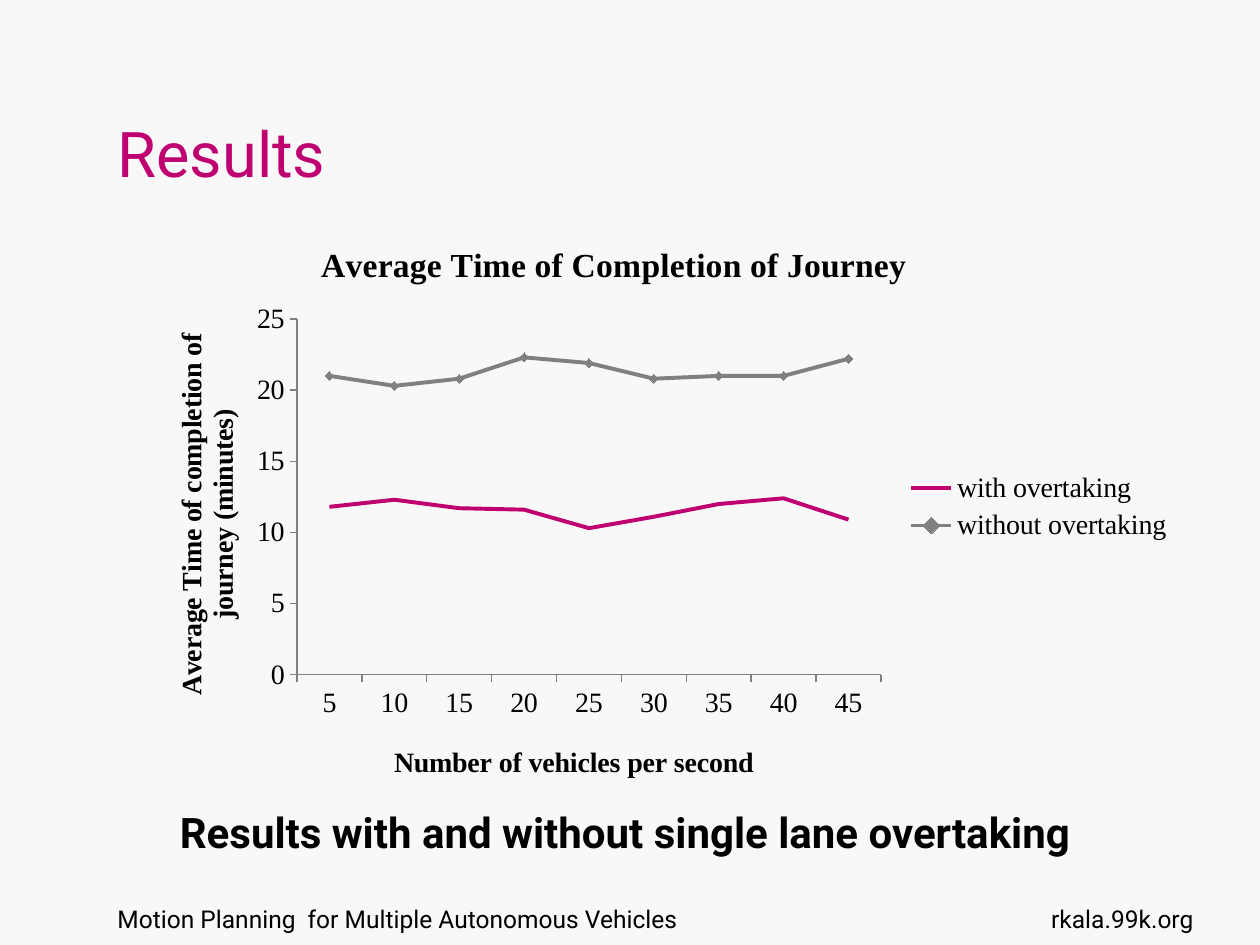
from lxml.etree import SubElement
from pptx import Presentation
from pptx.chart.data import CategoryChartData
from pptx.dml.color import RGBColor
from pptx.enum.chart import (XL_CHART_TYPE as CHART, XL_LEGEND_POSITION as LEGEND,
                             XL_MARKER_STYLE as MARKER, XL_TICK_MARK as TICK)
from pptx.enum.text import MSO_ANCHOR as ANCHOR, PP_ALIGN as ALIGN
from pptx.oxml.ns import qn
from pptx.util import Emu, Pt

PINK, GRAY, BLACK, BACKGROUND = "BF0071", "808080", "000000", "F8F8F8"
SANS, SERIF = "Roboto", "Times New Roman"

TITLE = ("Results", (105, 38, 853, 158))
# text, box, size, bold, alignment
TEXTS = [
    ("Motion Planning  for Multiple Autonomous Vehicles", (105, 898, 873, 66), 14, False, ALIGN.LEFT),
    ("rkala.99k.org", (1017, 898, 189, 66), 14, False, ALIGN.RIGHT),
    ("Results with and without single lane overtaking", (94, 800, 1062, 63), 24, True, ALIGN.CENTER),
]
CHART_BOX = (134, 214, 1052, 586)
PLOT_BOX = (297, 319, 584, 356)
CATEGORIES = ["5", "10", "15", "20", "25", "30", "35", "40", "45"]
# name, values, colour, marker
SERIES = [
    ("with overtaking", [11.8, 12.3, 11.7, 11.6, 10.3, 11.1, 12, 12.4, 10.9], PINK, MARKER.NONE),
    ("without overtaking", [21, 20.3, 20.8, 22.3, 21.9, 20.8, 21, 21, 22.2], GRAY, MARKER.DIAMOND),
]
# text, size, top left corner
CHART_TITLE = ("Average Time of Completion of Journey", 19.2, (315, 237))
CATEGORY_TITLE = ("Number of vehicles per second", 16, (389, 739))
VALUE_TITLE = ("Average Time of completion of journey (minutes)", 16, (168, 328))


def px(n):
    return Emu(round(n * 914400 / 126))


def rgb(color):
    return RGBColor.from_string(color)


def style(font, name, size, color=BLACK, bold=False):
    font.name, font.size, font.bold = name, Pt(size), bold
    font.color.rgb = rgb(color)


def set_layout(parent, index, box, inner=False):
    """Fix a chart part at a box (or corner) given in slide px."""
    for old in parent.findall(qn("c:layout")):
        parent.remove(old)
    layout = SubElement(parent, qn("c:layout"))
    parent.insert(index, layout)
    manual = SubElement(layout, qn("c:manualLayout"))
    left, top, width, height = CHART_BOX
    values = [("xMode", "edge"), ("yMode", "edge"),
              ("x", (box[0] - left) / width), ("y", (box[1] - top) / height)]
    if inner:
        values.insert(0, ("layoutTarget", "inner"))
        values += [("w", box[2] / width), ("h", box[3] / height)]
    for tag, value in values:
        SubElement(manual, qn(f"c:{tag}")).set("val", str(value))


def set_chart_title(title, element, text, size, corner):
    title.text_frame.text = text
    style(title.text_frame.paragraphs[0].runs[0].font, SERIF, size, bold=True)
    set_layout(element, 1, corner)


def add_line_chart(slide):
    data = CategoryChartData()
    data.categories = CATEGORIES
    for name, values, _, _ in SERIES:
        data.add_series(name, values)
    chart = slide.shapes.add_chart(CHART.LINE_MARKERS, *map(px, CHART_BOX), data).chart
    style(chart.font, SERIF, 16)
    chart.has_title = True
    title = chart.chart_title
    set_chart_title(title, title._chartTitle if hasattr(title, "_chartTitle") else title._element, *CHART_TITLE)
    title.include_in_layout = True if hasattr(title, "include_in_layout") else None

    for axis, spec_title in ((chart.category_axis, CATEGORY_TITLE), (chart.value_axis, VALUE_TITLE)):
        axis.has_title = True
        set_chart_title(axis.axis_title, axis.axis_title._element, *spec_title)
        axis.has_major_gridlines = False
        axis.major_tick_mark, axis.minor_tick_mark = TICK.OUTSIDE, TICK.NONE
        axis.format.line.color.rgb = rgb(GRAY)
    scale = chart.value_axis
    scale.minimum_scale, scale.maximum_scale, scale.major_unit = 0, 25, 5
    scale.tick_labels.number_format = "General"
    scale.tick_labels.number_format_is_linked = False

    chart.has_legend = True
    chart.legend.position = LEGEND.RIGHT
    chart.legend.include_in_layout = False
    chart.plots[0].vary_by_categories = False
    for series, (_, _, color, marker) in zip(chart.plots[0].series, SERIES):
        series.smooth = False
        series.format.line.color.rgb = rgb(color)
        series.format.line.width = Pt(2.25)
        series.marker.style = marker
        if marker != MARKER.NONE:
            series.marker.size = 5
            series.marker.format.fill.solid()
            series.marker.format.fill.fore_color.rgb = rgb(color)
            series.marker.format.line.color.rgb = rgb(color)
    set_layout(chart._chartSpace.chart.plotArea, 0, PLOT_BOX, inner=True)


def add_title(slide):
    text, box = TITLE
    sp = slide.shapes.title
    sp.left, sp.top, sp.width, sp.height = map(px, box)
    tf = sp.text_frame
    tf.text = text
    tf.word_wrap = False
    tf.vertical_anchor = ANCHOR.BOTTOM
    p = tf.paragraphs[0]
    p.alignment = ALIGN.LEFT
    style(p.runs[0].font, SANS, 36, PINK)


def add_text(slide, text, box, size, bold, alignment):
    tf = slide.shapes.add_textbox(*map(px, box)).text_frame
    tf.word_wrap = True
    tf.text = text
    p = tf.paragraphs[0]
    p.alignment = alignment
    style(p.runs[0].font, SANS, size, bold=bold)


def main():
    prs = Presentation()
    prs.slide_width, prs.slide_height = px(1260), px(945)
    slide = prs.slides.add_slide(prs.slide_layouts[5])
    slide.background.fill.solid()
    slide.background.fill.fore_color.rgb = rgb(BACKGROUND)
    add_title(slide)
    add_line_chart(slide)
    for item in TEXTS:
        add_text(slide, *item)
    prs.save("out.pptx")


if __name__ == "__main__":
    main()
